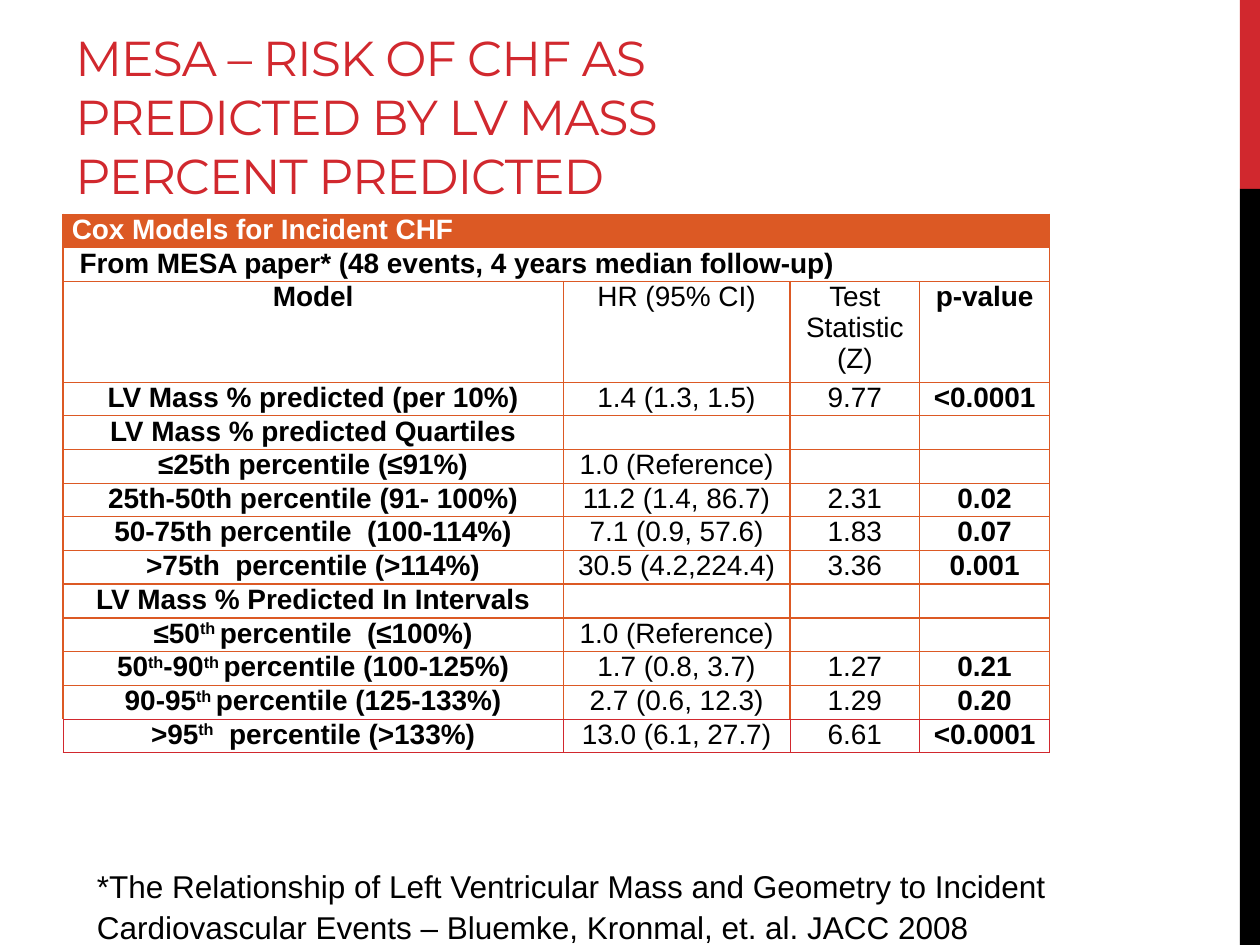
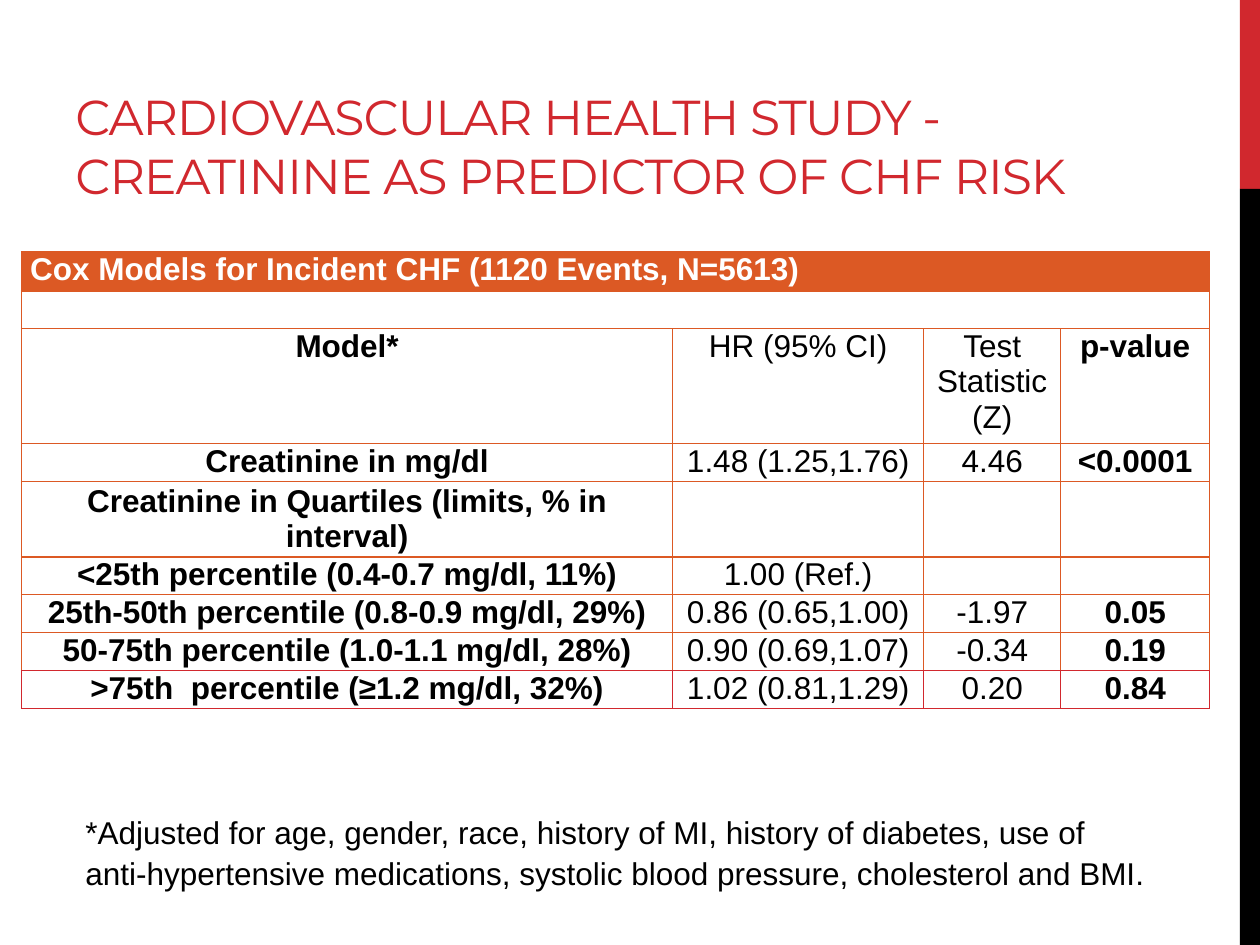
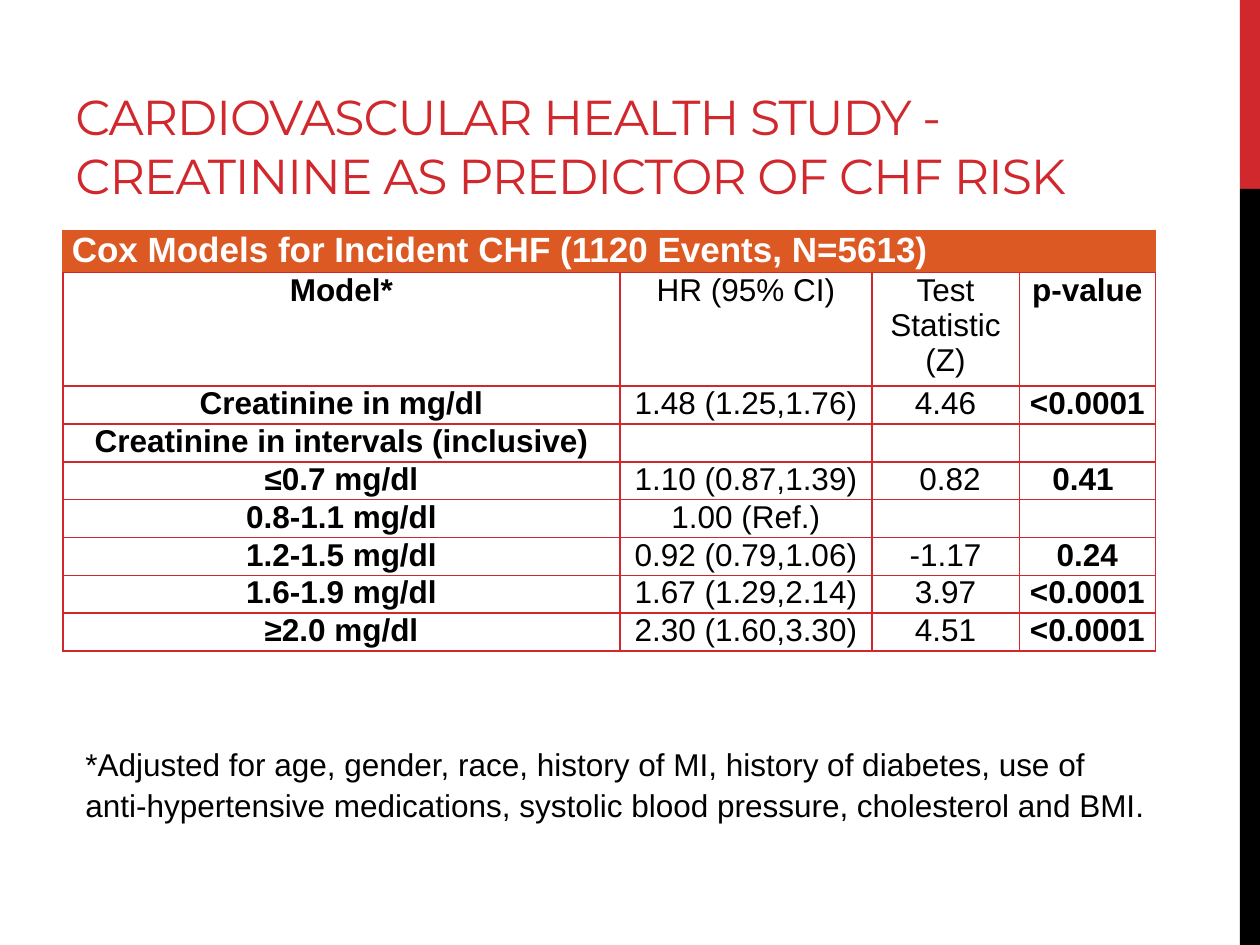
from lxml.etree import SubElement
from pptx import Presentation
from pptx.dml.color import RGBColor
from pptx.enum.shapes import MSO_SHAPE
from pptx.enum.text import MSO_ANCHOR, PP_ALIGN
from pptx.oxml.ns import qn
from pptx.util import Inches, Pt

RED = RGBColor(0xD1, 0x28, 0x2E)
ORANGE = RGBColor(0xDC, 0x59, 0x24)
BLACK = RGBColor(0, 0, 0)
WHITE = RGBColor(0xFF, 0xFF, 0xFF)
TITLE_FONT = "Montserrat"
BODY_FONT = "Arial"

ORANGE_RULE = (ORANGE, 0.75)
THIN_RED_RULE = (RED, 0.5)
RED_RULE = (RED, 1)

CHS_TITLE = "CARDIOVASCULAR HEALTH STUDY - CREATININE AS PREDICTOR OF CHF RISK"
CHS_BANNER = "Cox Models for Incident CHF (1120 Events, N=5613)"
CHS_NOTE = [
    "*Adjusted for age, gender, race, history of MI, history of diabetes, use of",
    "anti-hypertensive medications, systolic blood pressure, cholesterol and BMI.",
]
MEASURES = ["HR (95% CI)", "Test Statistic (Z)", "p-value"]

MESA_ROWS = [
    ["Cox Models for Incident CHF"],
    [" From MESA paper* (48 events, 4 years median follow-up)"],
    ["Model", *MEASURES],
    ["LV Mass % predicted (per 10%)", "1.4 (1.3, 1.5)", "9.77", "<0.0001"],
    ["LV Mass % predicted Quartiles", "", "", ""],
    ["≤25th percentile (≤91%)", "1.0 (Reference)", "", ""],
    ["25th-50th percentile (91- 100%)", "11.2 (1.4, 86.7)", "2.31", "0.02"],
    ["50-75th percentile  (100-114%)", "7.1 (0.9, 57.6)", "1.83", "0.07"],
    [">75th  percentile (>114%)", "30.5 (4.2,224.4)", "3.36", "0.001"],
    ["LV Mass % Predicted In Intervals", "", "", ""],
    ["≤50^th ^percentile  (≤100%)", "1.0 (Reference)", "", ""],
    ["50^th^-90^th ^percentile (100-125%)", "1.7 (0.8, 3.7)", "1.27", "0.21"],
    ["90-95^th ^percentile (125-133%)", "2.7 (0.6, 12.3)", "1.29", "0.20"],
    [">95^th^  percentile (>133%)", "13.0 (6.1, 27.7)", "6.61", "<0.0001"],
]
QUARTILE_ROWS = [
    [CHS_BANNER],
    [""],
    ["Model*", *MEASURES],
    ["Creatinine in mg/dl", "1.48 (1.25,1.76)", "4.46", "<0.0001"],
    ["Creatinine in Quartiles (limits, % in interval)", "", "", ""],
    ["<25th percentile (0.4-0.7 mg/dl, 11%)", "1.00 (Ref.)", "", ""],
    ["25th-50th percentile (0.8-0.9 mg/dl, 29%)", "0.86 (0.65,1.00)", "-1.97", "0.05"],
    ["50-75th percentile (1.0-1.1 mg/dl, 28%)", "0.90 (0.69,1.07)", "-0.34", "0.19"],
    [">75th  percentile (≥1.2 mg/dl, 32%)", "1.02 (0.81,1.29)", "0.20", "0.84"],
]
INTERVAL_ROWS = [
    [CHS_BANNER],
    ["Model*", *MEASURES],
    ["Creatinine in mg/dl", "1.48 (1.25,1.76)", "4.46", "<0.0001"],
    ["Creatinine in intervals (inclusive)", "", "", ""],
    ["≤0.7 mg/dl", "1.10 (0.87,1.39)", " 0.82", "0.41 "],
    ["0.8-1.1 mg/dl", "1.00 (Ref.)", "", ""],
    ["1.2-1.5 mg/dl", "0.92 (0.79,1.06)", "-1.17", "0.24"],
    ["1.6-1.9 mg/dl", "1.67 (1.29,2.14)", "3.97", "<0.0001"],
    ["≥2.0 mg/dl", "2.30 (1.60,3.30)", "4.51", "<0.0001"],
]


def style_run(run, font_name, size, color, bold=False):
    run.font.name = font_name
    run.font.size = Pt(size)
    run.font.color.rgb = color
    run.font.bold = bold


def add_side_band(slide):
    for top, height, color in [(0, 1.5, RED), (1.5, 6, BLACK)]:
        band = slide.shapes.add_shape(
            MSO_SHAPE.RECTANGLE, Inches(9.84), Inches(top), Inches(0.16), Inches(height))
        band.shadow.inherit = False
        band.fill.solid()
        band.fill.fore_color.rgb = color
        band.line.fill.background()


def add_title(slide, wording, width):
    title = slide.shapes.add_textbox(Inches(0.5), Inches(0.17), Inches(width), Inches(1.5))
    frame = title.text_frame
    frame.word_wrap = True
    frame.vertical_anchor = MSO_ANCHOR.BOTTOM
    frame.text = wording
    run = frame.paragraphs[0].runs[0]
    style_run(run, TITLE_FONT, 28, RED)
    run.font._element.set("spc", "-60")


def add_footnote(slide, lines, left, top, width, wrap):
    footnote = slide.shapes.add_textbox(Inches(left), Inches(top), Inches(width), Inches(0.71))
    frame = footnote.text_frame
    frame.word_wrap = wrap
    frame.text = "\n".join(lines)
    for paragraph in frame.paragraphs:
        paragraph.line_spacing = 1.1
        style_run(paragraph.runs[0], BODY_FONT, 18, BLACK)


def draw_borders(cell, rule, bottom_rule):
    properties = cell._tc.get_or_add_tcPr()
    sides = [("lnL", rule), ("lnR", rule), ("lnT", rule), ("lnB", bottom_rule)]
    for side, (color, points) in sides:
        line = SubElement(properties, qn(f"a:{side}"), w=str(Pt(points)))
        fill = SubElement(line, qn("a:solidFill"))
        SubElement(fill, qn("a:srgbClr"), val=str(color))


def write_cell(cell, wording, size, color, bold, centred):
    cell.margin_left = cell.margin_right = Inches(0.07)
    cell.margin_top = cell.margin_bottom = 0
    paragraph = cell.text_frame.paragraphs[0]
    paragraph.alignment = PP_ALIGN.CENTER if centred else PP_ALIGN.LEFT
    if not wording:
        SubElement(paragraph._p, qn("a:endParaRPr"), sz=str(size * 100))
        return
    for index, piece in enumerate(wording.split("^")):
        run = paragraph.add_run()
        run.text = piece
        style_run(run, BODY_FONT, size, color, bold)
        if index % 2:
            run.font._element.set("baseline", "30000")


def add_model_table(slide, left, top, widths, heights, rows, size, banner_size,
                    body_rule, last_rule):
    table = slide.shapes.add_table(
        len(rows), len(widths), Inches(left), Inches(top),
        Inches(sum(widths)), Inches(sum(heights))).table
    table.first_row = table.horz_banding = False
    for column, width in zip(table.columns, widths):
        column.width = Inches(width)
    rules = [ORANGE_RULE] + [body_rule] * (len(rows) - 2) + [last_rule]
    for r, (entries, height) in enumerate(zip(rows, heights)):
        table.rows[r].height = Inches(height)
        is_banner = r == 0
        is_full_width = len(entries) == 1
        for c in range(len(widths)):
            cell = table.cell(r, c)
            draw_borders(cell, rules[r], rules[min(r + 1, len(rows) - 1)])
            if is_banner:
                cell.fill.solid()
                cell.fill.fore_color.rgb = ORANGE
            else:
                cell.fill.background()
            if entries[0].startswith("Creatinine in Quartiles"):
                cell.vertical_anchor = MSO_ANCHOR.MIDDLE
            if c < len(entries):
                write_cell(cell, entries[c], banner_size if is_banner else size,
                           WHITE if is_banner else BLACK, c in (0, 3), not is_full_width)
        if is_full_width:
            table.cell(r, 0).merge(table.cell(r, len(widths) - 1))


def start_slide(deck, title, title_width):
    slide = deck.slides.add_slide(deck.slide_layouts[6])
    add_side_band(slide)
    add_title(slide, title, title_width)
    return slide


def build_mesa_slide(deck):
    slide = start_slide(
        deck, "MESA – RISK OF CHF AS PREDICTED BY LV MASS PERCENT PREDICTED", 6.33)
    heights = [0.24, 0.25, 0.74] + [0.25] * 3 + [0.26, 0.25, 0.25, 0.27] + [0.25] * 4
    add_model_table(slide, 0.5, 1.7, [3.97, 1.8, 1.03, 1.03], heights, MESA_ROWS,
                    16, 16, ORANGE_RULE, THIN_RED_RULE)
    add_footnote(slide, [
        "*The Relationship of Left Ventricular Mass and Geometry to Incident "
        "Cardiovascular Events – Bluemke, Kronmal, et. al. JACC 2008"], 0.67, 6.8, 8.25, True)


def build_quartile_slide(deck):
    slide = start_slide(deck, CHS_TITLE, 8.5)
    heights = [0.31, 0.3, 0.91, 0.28, 0.56] + [0.28] * 4
    add_model_table(slide, 0.17, 2, [5.17, 1.99, 1.09, 1.18], heights, QUARTILE_ROWS,
                    18, 18, ORANGE_RULE, THIN_RED_RULE)
    add_footnote(slide, CHS_NOTE, 0.58, 6.37, 8.7, False)


def build_interval_slide(deck):
    slide = start_slide(deck, CHS_TITLE, 8.5)
    heights = [0.31, 0.85] + [0.28] * 7
    add_model_table(slide, 0.5, 1.83, [4.42, 2, 1.17, 1.08], heights, INTERVAL_ROWS,
                    18, 20, RED_RULE, RED_RULE)
    add_footnote(slide, CHS_NOTE, 0.58, 5.83, 8.7, False)


def main():
    deck = Presentation()
    deck.slide_width = Inches(10)
    deck.slide_height = Inches(7.5)
    build_mesa_slide(deck)
    build_quartile_slide(deck)
    build_interval_slide(deck)
    deck.save("out.pptx")


if __name__ == "__main__":
    main()
